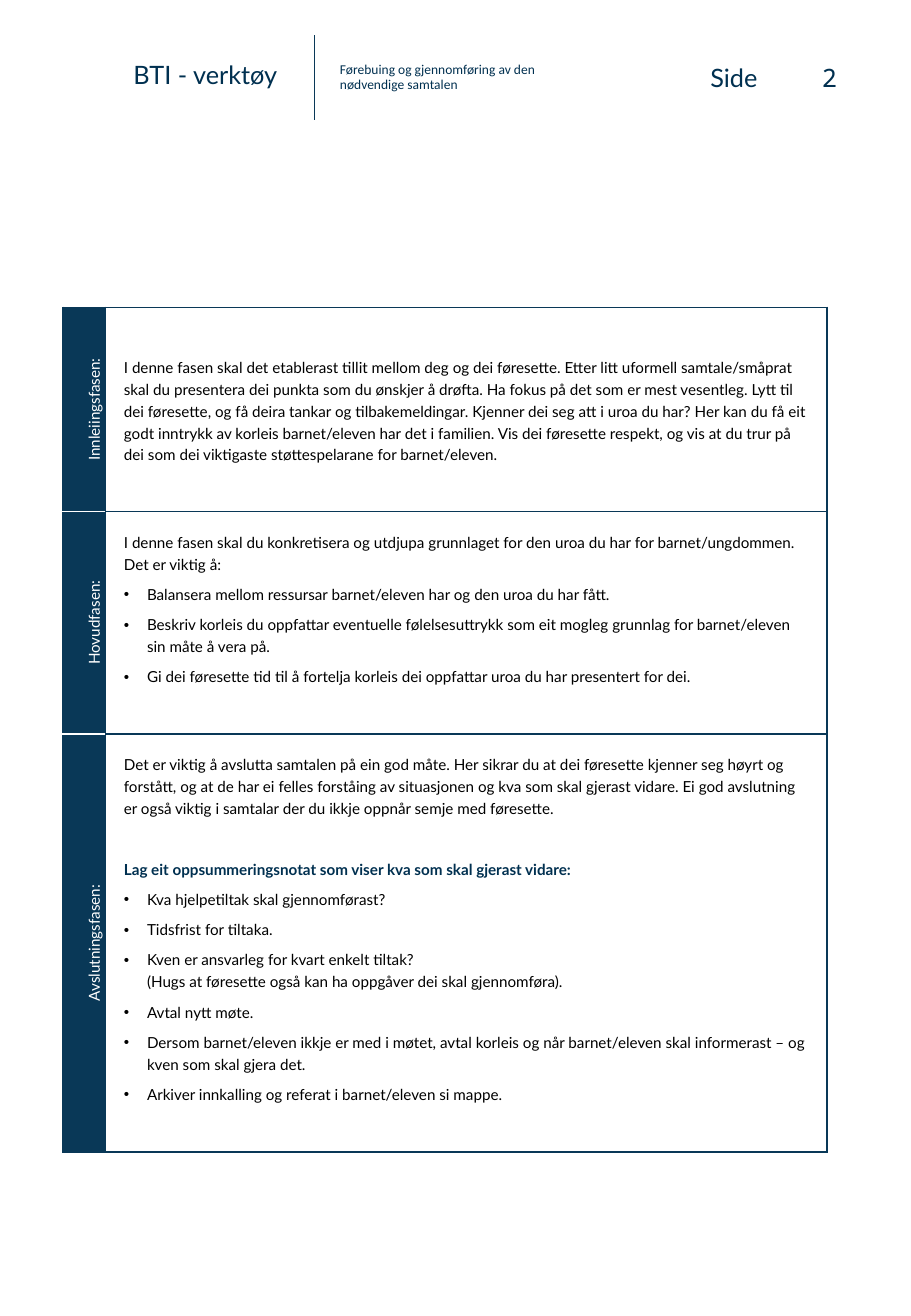
from dataclasses import dataclass

from lxml import etree
from pptx import Presentation, util as u
from pptx.dml.color import RGBColor
from pptx.enum import shapes, text
from pptx.oxml import ns

COLOURS = {"navy": "093857", "heading": "003050", "white": "FFFFFF", "black": "000000"}
COLUMN = ROW = u.Inches(0.01)
COLUMNS, ROWS = 750, 1083
BULLET_INDENT = 19 * COLUMN
CELL_MARGINS = {f"margin_{side}": 15 * COLUMN for side in ("left", "top", "right", "bottom")}
BODY_SPACING = {"line_spacing": 1.2, "space_after": u.Pt(5)}
LABEL_FORMAT = {"line_spacing": 1.2, "alignment": text.PP_ALIGN.CENTER}


@dataclass
class Line:
    words: str
    bullet: bool = False
    bold: bool = False
    colour: str = "black"
    space_before: float = 0


@dataclass
class Phase:
    label: str
    rows: int
    anchor: text.MSO_ANCHOR
    lines: list[Line]


@dataclass
class HeaderText:
    words: str
    column: int
    row: int
    columns: int
    rows: int
    size: float = 15
    font: str = "Lato"
    anchor: text.MSO_ANCHOR = text.MSO_ANCHOR.TOP
    alignment: text.PP_ALIGN = text.PP_ALIGN.LEFT
    line_spacing: float = 1.0


HEADER = [
    HeaderText("BTI - verktøy", 100, 44, 221, 35),
    HeaderText("Side", 575, 46, 123, 35),
    HeaderText("Førebuing og gjennomføring av den\vnødvendige samtalen", 270, 29, 298, 70,
               8, "Calibri", text.MSO_ANCHOR.MIDDLE, line_spacing=0.9),
    HeaderText("2", 579, 29, 120, 70, 15, "Noto Sans Mono",
               text.MSO_ANCHOR.MIDDLE, text.PP_ALIGN.RIGHT),
]

PHASES = [
    Phase("Innleiingsfasen:", 168, text.MSO_ANCHOR.MIDDLE, [
        Line("I denne fasen skal det etablerast tillit mellom deg og dei føresette. Etter litt "
             "uformell samtale/småprat skal du presentera dei punkta som du ønskjer å drøfta. "
             "Ha fokus på det som er mest vesentleg. Lytt til dei føresette, og få deira tankar "
             "og tilbakemeldingar. Kjenner dei seg att i uroa du har? Her kan du få eit godt "
             "inntrykk av korleis barnet/eleven har det i familien. Vis dei føresette respekt, "
             "og vis at du trur på dei som dei viktigaste støttespelarane for barnet/eleven."),
    ]),
    Phase("Hovudfasen:", 183, text.MSO_ANCHOR.TOP, [
        Line("I denne fasen skal du konkretisera og utdjupa grunnlaget for den uroa du har for "
             "barnet/ungdommen. Det er viktig å:"),
        Line("Balansera mellom ressursar barnet/eleven har og den uroa du har fått.", True),
        Line("Beskriv korleis du oppfattar eventuelle følelsesuttrykk som eit mogleg grunnlag "
             "for barnet/eleven sin måte å vera på.", True),
        Line("Gi dei føresette tid til å fortelja korleis dei oppfattar uroa du har presentert "
             "for dei.", True),
    ]),
    Phase("Avslutningsfasen:", 344, text.MSO_ANCHOR.TOP, [
        Line("Det er viktig å avslutta samtalen på ein god måte. Her sikrar du at dei føresette "
             "kjenner seg høyrt og forstått, og at de har ei felles forståing av situasjonen og "
             "kva som skal gjerast vidare. Ei god avslutning er også viktig i samtalar der du "
             "ikkje oppnår semje med føresette."),
        Line("Lag eit oppsummeringsnotat som viser kva som skal gjerast vidare:",
             bold=True, colour="heading", space_before=18),
        Line("Kva hjelpetiltak skal gjennomførast?", True),
        Line("Tidsfrist for tiltaka.", True),
        Line("Kven er ansvarleg for kvart enkelt tiltak?\v(Hugs at føresette også kan ha "
             "oppgåver dei skal gjennomføra).", True),
        Line("Avtal nytt møte.", True),
        Line("Dersom barnet/eleven ikkje er med i møtet, avtal korleis og når barnet/eleven "
             "skal informerast – og kven som skal gjera det.", True),
        Line("Arkiver innkalling og referat i barnet/eleven si mappe.", True),
    ]),
]


def colour_of(name: str) -> RGBColor:
    return RGBColor.from_string(COLOURS[name])


def apply(target, values: dict) -> None:
    for name, value in values.items():
        setattr(target, name, value)


def write(paragraph, words: str, colour: str, size: float = 9, font: str = "Lato",
          bold: bool = False) -> None:
    paragraph.text = words
    for run in paragraph.runs:
        apply(run.font, {"size": u.Pt(size), "name": font, "bold": bold})
        run.font.color.rgb = colour_of(colour)


def add_header_text(slide, item: HeaderText) -> None:
    box = slide.shapes.add_textbox(item.column * COLUMN, item.row * ROW,
                                   item.columns * COLUMN, item.rows * ROW)
    apply(box.text_frame, {"word_wrap": True, "vertical_anchor": item.anchor})
    paragraph = box.text_frame.paragraphs[0]
    apply(paragraph, {"alignment": item.alignment, "line_spacing": item.line_spacing})
    write(paragraph, item.words, "heading", item.size, item.font)


def add_divider(slide) -> None:
    line = slide.shapes.add_connector(shapes.MSO_CONNECTOR.STRAIGHT,
                                      259 * COLUMN, 29 * ROW, 259 * COLUMN, 99 * ROW)
    line.line.color.rgb = colour_of("navy")
    line.line.width = u.Pt(1)
    etree.SubElement(line._element.spPr, ns.qn("a:effectLst"))


def set_borders(cell, top: str = "navy", bottom: str = "navy") -> None:
    properties = cell._tc.get_or_add_tcPr()
    for side, colour in {"L": "navy", "R": "navy", "T": top, "B": bottom}.items():
        border = etree.SubElement(properties, ns.qn(f"a:ln{side}"), w=str(u.Pt(1)))
        fill = etree.SubElement(border, ns.qn("a:solidFill"))
        etree.SubElement(fill, ns.qn("a:srgbClr"), val=COLOURS[colour])


def add_bullet(paragraph) -> None:
    properties = paragraph._p.get_or_add_pPr()
    properties.set("marL", str(BULLET_INDENT))
    properties.set("indent", str(-BULLET_INDENT))
    etree.SubElement(properties, ns.qn("a:buFont"), typeface="Arial")
    etree.SubElement(properties, ns.qn("a:buChar"), char="•")


def fill_label(cell, phase: Phase, first: bool, last: bool) -> None:
    apply(cell, CELL_MARGINS | {"vertical_anchor": text.MSO_ANCHOR.MIDDLE})
    set_borders(cell, "navy" if first else "white", "navy" if last else "white")
    cell.fill.solid()
    cell.fill.fore_color.rgb = colour_of("navy")
    cell._tc.get_or_add_tcPr().set("vert", "vert270")
    paragraph = cell.text_frame.paragraphs[0]
    apply(paragraph, LABEL_FORMAT)
    write(paragraph, phase.label, "white")


def fill_body(cell, phase: Phase) -> None:
    apply(cell, CELL_MARGINS | {"vertical_anchor": phase.anchor})
    set_borders(cell)
    cell.fill.background()
    frame = cell.text_frame
    for index, line in enumerate(phase.lines):
        paragraph = frame.add_paragraph() if index else frame.paragraphs[0]
        if line.bullet:
            add_bullet(paragraph)
        apply(paragraph, BODY_SPACING)
        if line.space_before:
            paragraph.space_before = u.Pt(line.space_before)
        write(paragraph, line.words, line.colour, bold=line.bold)


def add_phase_table(slide) -> None:
    widths = (35, 594)
    height = sum(phase.rows for phase in PHASES)
    table = slide.shapes.add_table(len(PHASES), len(widths), 52 * COLUMN, 253 * ROW,
                                   sum(widths) * COLUMN, height * ROW).table
    apply(table, {"first_row": False, "horz_banding": False})
    for column, width in zip(table.columns, widths):
        column.width = width * COLUMN
    for index, phase in enumerate(PHASES):
        table.rows[index].height = phase.rows * ROW
        fill_label(table.cell(index, 0), phase, index == 0, index == len(PHASES) - 1)
        fill_body(table.cell(index, 1), phase)


def main() -> None:
    presentation = Presentation()
    apply(presentation, {"slide_width": COLUMNS * COLUMN, "slide_height": ROWS * ROW})
    slide = presentation.slides.add_slide(presentation.slide_layouts[6])
    add_divider(slide)
    for item in HEADER:
        add_header_text(slide, item)
    add_phase_table(slide)
    presentation.save("out.pptx")


if __name__ == "__main__":
    main()
